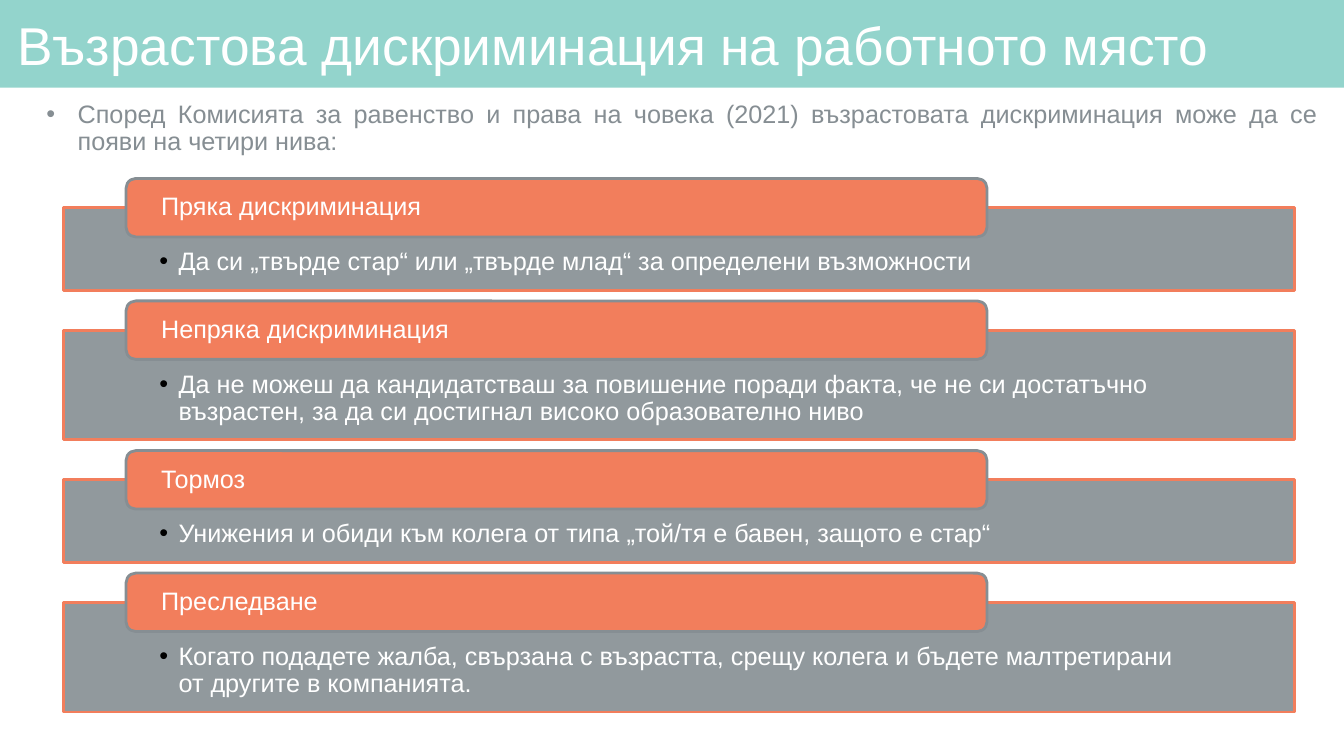
from dataclasses import dataclass

import pptx
import pptx.dml.color
import pptx.enum.shapes
import pptx.enum.text
import pptx.oxml
import pptx.oxml.ns
import pptx.util

SHAPES = pptx.enum.shapes.MSO_SHAPE
ALIGN = pptx.enum.text.PP_ALIGN
ANCHOR = pptx.enum.text.MSO_ANCHOR
NAMESPACE = pptx.oxml.ns.nsdecls("a")

TITLE = "Възрастова дискриминация на работното място"
INTRO = ("Според Комисията за равенство и права на човека (2021) "
         "възрастовата дискриминация може да се появи на четири нива:")
# Heading, explanation, number of lines in the explanation
LEVELS = [
    ("Пряка дискриминация",
     "Да си „твърде стар“ или „твърде млад“ за определени възможности", 1),
    ("Непряка дискриминация",
     "Да не можеш да кандидатстваш за повишение поради факта, че не си достатъчно "
     "възрастен, за да си достигнал високо образователно ниво", 2),
    ("Тормоз",
     "Унижения и обиди към колега от типа „той/тя е бавен, защото е стар“", 1),
    ("Преследване",
     "Когато подадете жалба, свързана с възрастта, срещу колега и бъдете "
     "малтретирани от другите в компанията.", 2),
]

# Vertical rhythm of the level panels, in percent of the slide height
FIRST_PANEL_TOP = 27.47
PANEL_HEIGHTS = {1: 10.93, 2: 14.53}
PANEL_GAP = 5.27
TAB_HEIGHT = 7.73


@dataclass(frozen=True)
class Theme:
    font: str = "Arial"
    title_size: int = 38
    body_size: int = 18
    line_width: int = 2
    line_spacing: float = 0.9
    mint: str = "93D4CC"
    coral: str = "F27E5C"
    gray: str = "868E93"
    white: str = "FFFFFF"
    black: str = "000000"


class SlideBuilder:
    """Places styled elements by percentages of the slide's width and height."""

    def __init__(self, presentation, theme):
        self.theme = theme
        self.width = presentation.slide_width
        self.height = presentation.slide_height
        self.slide = presentation.slides.add_slide(presentation.slide_layouts[5])

    def across(self, percent):
        return round(self.width * percent / 100)

    def down(self, percent):
        return round(self.height * percent / 100)

    def box(self, left, top, width, height):
        return self.across(left), self.down(top), self.across(width), self.down(height)

    def set_text(self, shape, text, color, size, insets, anchor=ANCHOR.TOP, align=ALIGN.LEFT):
        """Fill the shape with one paragraph; insets are left/right, top, bottom."""
        side, top, bottom = insets
        frame = shape.text_frame
        frame.text = text
        frame.word_wrap = True
        frame.auto_size = pptx.enum.text.MSO_AUTO_SIZE.NONE
        frame.vertical_anchor = anchor
        frame.margin_left = frame.margin_right = self.across(side)
        frame.margin_top, frame.margin_bottom = self.down(top), self.down(bottom)
        paragraph = frame.paragraphs[0]
        paragraph.alignment = align
        paragraph.line_spacing = self.theme.line_spacing
        font = paragraph.runs[0].font
        font.name, font.size = self.theme.font, pptx.util.Pt(size)
        font.color.rgb = pptx.dml.color.RGBColor.from_string(color)
        return paragraph

    def bullet(self, paragraph, color, indent, hanging):
        properties = paragraph._p.get_or_add_pPr()
        properties.set("marL", str(self.across(indent)))
        properties.set("indent", str(-self.across(hanging)))
        for markup in (
            f'<a:buClr {NAMESPACE}><a:srgbClr val="{color}"/></a:buClr>',
            f'<a:buFont {NAMESPACE} typeface="{self.theme.font}"/>',
            f'<a:buChar {NAMESPACE} char="•"/>',
        ):
            properties.append(pptx.oxml.parse_xml(markup))

    def block(self, kind, bounds, fill, line=None, opacity=100):
        shape = self.slide.shapes.add_shape(kind, *self.box(*bounds))
        shape.shadow.inherit = False
        shape.fill.solid()
        shape.fill.fore_color.rgb = pptx.dml.color.RGBColor.from_string(fill)
        if opacity < 100:
            color = shape.element.spPr.find(".//" + pptx.oxml.ns.qn("a:srgbClr"))
            color.append(pptx.oxml.parse_xml(
                f'<a:alpha {NAMESPACE} val="{opacity * 1000}"/>'))
        if line:
            shape.line.color.rgb = pptx.dml.color.RGBColor.from_string(line)
            shape.line.width = pptx.util.Pt(self.theme.line_width)
        else:
            shape.line.fill.background()
        return shape

    def title(self, text):
        theme = self.theme
        band = self.block(SHAPES.RECTANGLE, (0, 0, 100, 11.6), theme.mint)
        title = self.slide.shapes.title
        title.element.addprevious(band.element)
        title.left, title.top, title.width, title.height = self.box(0.83, 1.2, 97.97, 10.4)
        self.set_text(title, text, theme.white, theme.title_size,
                      (0.45, 0.8, 0.8), ANCHOR.MIDDLE)

    def intro(self, text):
        theme = self.theme
        shape = self.slide.shapes.add_textbox(*self.box(0.83, 12.8, 97.97, 85.6))
        paragraph = self.set_text(shape, text, theme.gray, theme.body_size,
                                  (0.75, 0.67, 0.67), align=ALIGN.JUSTIFY)
        paragraph.space_before = pptx.util.Pt(10)
        self.bullet(paragraph, theme.gray, 4.2, 2.33)

    def level(self, heading, explanation, top, height):
        """Add a panel with its heading tab straddling the top edge."""
        theme = self.theme
        panel = self.block(SHAPES.RECTANGLE, (4.73, top, 91.6, height),
                           theme.gray, theme.coral, opacity=90)
        paragraph = self.set_text(panel, explanation, theme.white, theme.body_size,
                                  (7.13, 5.47, 1.87))
        self.bullet(paragraph, theme.black, 1.43, 1.43)
        tab = self.block(SHAPES.ROUNDED_RECTANGLE,
                         (9.38, top - TAB_HEIGHT / 2, 64.06, TAB_HEIGHT),
                         theme.coral, theme.gray)
        self.set_text(tab, heading, theme.white, theme.body_size,
                      (2.4, 0, 0), ANCHOR.MIDDLE)


def main():
    presentation = pptx.Presentation()
    presentation.slide_width = pptx.util.Inches(13.33)
    presentation.slide_height = pptx.util.Inches(7.5)
    builder = SlideBuilder(presentation, Theme())
    builder.title(TITLE)
    builder.intro(INTRO)
    top = FIRST_PANEL_TOP
    for heading, explanation, lines in LEVELS:
        height = PANEL_HEIGHTS[lines]
        builder.level(heading, explanation, top, height)
        top += height + PANEL_GAP
    presentation.save("out.pptx")


if __name__ == "__main__":
    main()
